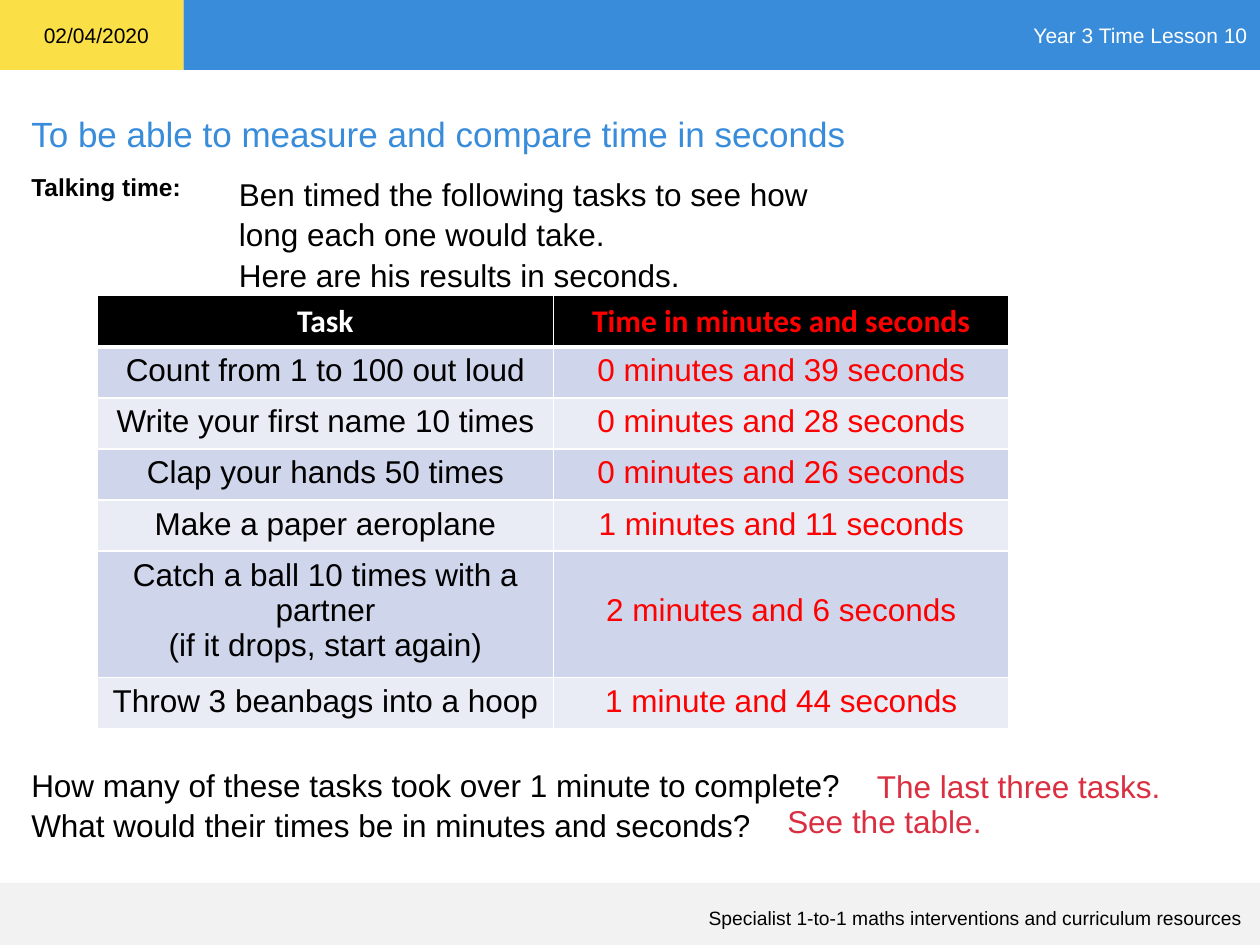
"""Build a maths lesson slide with a table of timed tasks."""
from lxml.etree import SubElement
from pptx import Presentation
from pptx.dml.color import RGBColor
from pptx.enum.shapes import MSO_SHAPE
from pptx.enum.text import MSO_ANCHOR, PP_ALIGN
from pptx.oxml.ns import qn
from pptx.util import Pt

BLACK = RGBColor(0x00, 0x00, 0x00)
WHITE = RGBColor(0xFF, 0xFF, 0xFF)
BLUE = RGBColor(0x38, 0x8C, 0xDA)
YELLOW = RGBColor(0xFA, 0xDF, 0x47)
GREY = RGBColor(0xF2, 0xF2, 0xF2)
RED = RGBColor(0xFF, 0x00, 0x00)
ANSWER_RED = RGBColor(0xDA, 0x2E, 0x41)
BAND_DARK = RGBColor(0xCF, 0xD5, 0xEA)
BAND_LIGHT = RGBColor(0xE9, 0xEB, 0xF5)


def write_text(text_frame, text, color, size, alignment=PP_ALIGN.LEFT, spacing=1.0, name="Arial", bold=False):
    text_frame.text = text
    for paragraph in text_frame.paragraphs:
        paragraph.alignment = alignment
        paragraph.line_spacing = spacing
        for run in paragraph.runs:
            run.font.color.rgb = color
            for attribute, value in {"name": name, "size": Pt(size), "bold": bold}.items():
                setattr(run.font, attribute, value)


def add_borders(cell, widths):
    properties = cell._tc.get_or_add_tcPr()
    for side, width in widths.items():
        line = SubElement(properties, qn(f"a:{side}"), w=str(Pt(width)))
        fill = SubElement(line, qn("a:solidFill"))
        SubElement(fill, qn("a:srgbClr"), val=str(WHITE))


presentation = Presentation()
presentation.slide_width = Pt(720)
presentation.slide_height = Pt(540)
slide = presentation.slides.add_slide(presentation.slide_layouts[6])

bands = [
    ((0, 0, 105, 40), YELLOW, ""),
    ((105, 0, 615, 40), BLUE, "Year 3 Time Lesson 10"),
    ((-3, 504.5, 723, 40), GREY, ""),
]
for box, color, text in bands:
    band = slide.shapes.add_shape(MSO_SHAPE.RECTANGLE, *map(Pt, box))
    band.shadow.inherit = False
    band.fill.solid()
    band.fill.fore_color.rgb = color
    band.line.fill.background()
    if text:
        band.text_frame.vertical_anchor = MSO_ANCHOR.MIDDLE
        write_text(band.text_frame, text, WHITE, 12, PP_ALIGN.RIGHT)

text_boxes = [
    ((30, 509, 687, 31), "Specialist 1-to-1 maths interventions and curriculum resources",
     True, {"color": BLACK, "size": 11, "alignment": PP_ALIGN.RIGHT}),
    ((10.8, 60.5, 699, 31.5), "To be able to measure and compare time in seconds",
     True, {"color": BLUE, "size": 20}),
    ((18, 9.4, 75, 21.6), "02/04/2020", False, {"color": BLACK, "size": 12}),
    ((10.8, 95, 100, 24.5), "Talking time:", False, {"color": BLACK, "size": 14, "bold": True}),
    ((129.4, 95, 373, 72.7),
     "Ben timed the following tasks to see how long each one would take.\nHere are his results in seconds.",
     True, {"color": BLACK, "size": 18, "spacing": 1.07}),
    ((10.8, 432.5, 543, 72.7),
     "How many of these tasks took over 1 minute to complete?\nWhat would their times be in minutes and seconds?",
     True, {"color": BLACK, "size": 18, "spacing": 1.07}),
    ((494, 435, 178, 29), "The last three tasks.", False, {"color": ANSWER_RED, "size": 18}),
    ((442.8, 454.5, 127, 29), "See the table.", False, {"color": ANSWER_RED, "size": 18}),
]
for box, text, wrap, text_format in text_boxes:
    text_box = slide.shapes.add_textbox(*map(Pt, box))
    text_box.text_frame.word_wrap = wrap
    write_text(text_box.text_frame, text, **text_format)
    if text_format.get("alignment") == PP_ALIGN.RIGHT:
        text_box.text_frame.vertical_anchor = MSO_ANCHOR.MIDDLE

rows = [
    ("Task", "Time in minutes and seconds"),
    ("Count from 1 to 100 out loud", "0 minutes and 39 seconds"),
    ("Write your first name 10 times", "0 minutes and 28 seconds"),
    ("Clap your hands 50 times", "0 minutes and 26 seconds"),
    ("Make a paper aeroplane", "1 minutes and 11 seconds"),
    ("Catch a ball 10 times with a partner\n(if it drops, start again)", "2 minutes and 6 seconds"),
    ("Throw 3 beanbags into a hoop", "1 minute and 44 seconds"),
]
ROW_HEIGHT = 29.2
TALL_ROW = 5
table = slide.shapes.add_table(len(rows), 2, Pt(55.7), Pt(169), Pt(521), Pt(ROW_HEIGHT * len(rows))).table
for row_index, row in enumerate(rows):
    table.rows[row_index].height = Pt(72 if row_index == TALL_ROW else ROW_HEIGHT)
    header = row_index == 0
    for column_index, text in enumerate(row):
        cell = table.cell(row_index, column_index)
        text_color = RED if column_index else WHITE if header else BLACK
        write_text(cell.text_frame, text, text_color, 18, PP_ALIGN.CENTER,
                   name="Calibri" if header else "Arial", bold=header)
        add_borders(cell, {"lnL": 1, "lnR": 1, "lnT": 3 if row_index == 1 else 1, "lnB": 3 if header else 1})
        cell.fill.solid()
        cell.fill.fore_color.rgb = BLACK if header else BAND_DARK if row_index % 2 else BAND_LIGHT
table.cell(TALL_ROW, 1).margin_top = Pt(23.7)

presentation.save("out.pptx")
